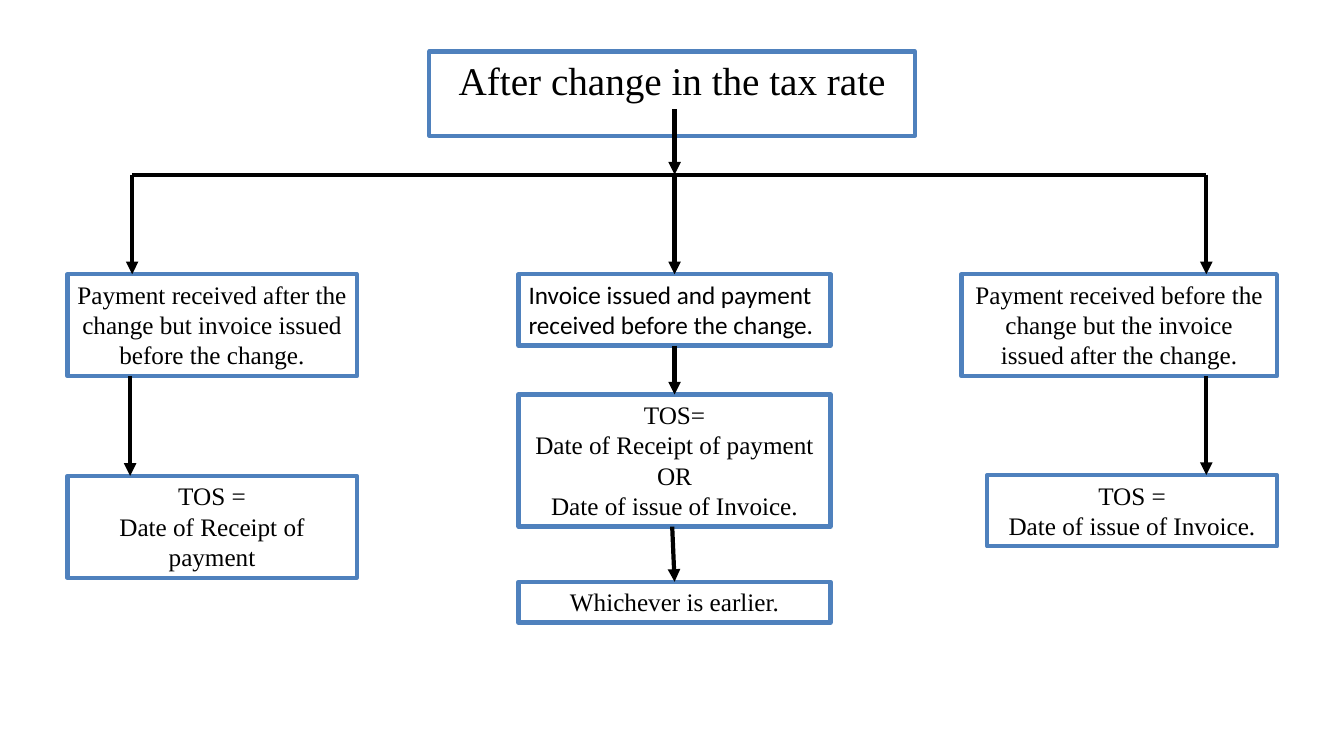
from dataclasses import dataclass

from lxml import etree
from pptx import Presentation
from pptx import util as u
from pptx.dml import color
from pptx.enum import shapes, text
from pptx.oxml import ns

COLOURS = {"paper": "FFFFFF", "border": "4F81BD", "ink": "000000"}
SERIF = "Times New Roman"
BUS_TOP = 4.4
BRANCH_TOP = 6.91
TRUNK = 17.0


@dataclass
class Card:
    """One box of a branch, with the x where its arrow arrives."""
    box: tuple
    lines: list
    arrive: float
    depart: float = None
    font: str = SERIF
    align: int = text.PP_ALIGN.CENTER


def rgb(name):
    """Look up a named colour."""
    return color.RGBColor.from_string(COLOURS[name])


def style_box(shape, lines, size, font=SERIF, align=text.PP_ALIGN.CENTER):
    """Fill, outline and write a bordered box."""
    shape.fill.solid()
    shape.fill.fore_color.rgb = rgb("paper")
    shape.line.color.rgb = rgb("border")
    shape.line.width = u.Pt(3)
    frame = shape.text_frame
    frame.text = "\n".join(lines)
    frame.word_wrap = True
    frame.auto_size = text.MSO_AUTO_SIZE.SHAPE_TO_FIT_TEXT
    frame.vertical_anchor = text.MSO_ANCHOR.TOP
    for para in frame.paragraphs:
        para.alignment = align
        para.font.name = font
        para.font.size = u.Pt(size)
        para.font.color.rgb = rgb("ink")


def add_line(page, start, end, arrow=True):
    """Draw a straight black line, with an arrowhead if wanted."""
    line = page.shapes.add_connector(
        shapes.MSO_CONNECTOR.STRAIGHT, *map(u.Cm, start + end))
    line.line.color.rgb = rgb("ink")
    line.line.width = u.Pt(3)
    if arrow:
        outline = line.line._get_or_add_ln()
        etree.SubElement(outline, ns.qn("a:tailEnd"), type="triangle")
    etree.SubElement(line._element.spPr, ns.qn("a:effectLst"))
    return line


def is_middle(x, box):
    """Tell whether x is the middle of a box."""
    return abs(box[0] + box[2] / 2 - x) < 0.02


def add_heading(page, box):
    """Place the title and the arrow down to the crossbar."""
    left, top, width, height = box
    title = page.shapes.title
    title.left, title.top, title.width, title.height = map(u.Cm, box)
    style_box(title, ["After change in the tax rate"], 28)
    add_line(page, (TRUNK, top + height), (TRUNK, BUS_TOP))


def add_branch(page, cards):
    """Stack cards below the crossbar and join them with arrows."""
    above = above_shape = None
    for card in cards:
        shape = page.shapes.add_shape(
            shapes.MSO_SHAPE.RECTANGLE, *map(u.Cm, card.box))
        shape.shadow.inherit = False
        style_box(shape, card.lines, 18, card.font, card.align)
        depart = card.depart or card.arrive
        start_y = above.box[1] + above.box[3] if above else BUS_TOP
        arrow = add_line(page, (depart, start_y), (card.arrive, card.box[1]))
        if above and is_middle(depart, above.box):
            arrow.begin_connect(above_shape, 2)
        if is_middle(card.arrive, card.box):
            arrow.end_connect(shape, 0)
        above, above_shape = card, shape


def main():
    """Build the slide and save it."""
    deck = Presentation()
    deck.slide_width, deck.slide_height = u.Cm(33.87), u.Cm(19.05)
    page = deck.slides.add_slide(deck.slide_layouts[5])
    add_heading(page, (10.82, 1.3, 12.24, 1.46))

    payment_after = [
        Card((1.7, BRANCH_TOP, 7.29, 2.57),
             ["Payment received after the change but invoice issued before the change."], 3.33),
        Card((1.7, 11.99, 7.29, 2.57), ["TOS =", "Date of Receipt of payment"], 3.28),
    ]
    both_before = [
        Card((13.07, BRANCH_TOP, 7.86, 1.8),
             ["Invoice issued and payment received before the change."],
             TRUNK, font="Calibri", align=text.PP_ALIGN.LEFT),
        Card((13.07, 9.94, 7.86, 3.33),
             ["TOS=", "Date of Receipt of payment", "OR", "Date of issue of Invoice."], TRUNK),
        Card((13.07, 14.66, 7.86, 1.03), ["Whichever is earlier."], TRUNK, depart=16.94),
    ]
    payment_before = [
        Card((24.23, BRANCH_TOP, 7.95, 2.57),
             ["Payment received before the change but the invoice issued after the change."], 30.4),
        Card((24.88, 11.97, 7.3, 1.8), ["TOS =", "Date of issue of Invoice."], 30.4),
    ]

    add_line(page, (payment_after[0].arrive, BUS_TOP),
             (payment_before[0].arrive, BUS_TOP), arrow=False)
    for cards in (payment_after, both_before, payment_before):
        add_branch(page, cards)
    deck.save("out.pptx")


if __name__ == "__main__":
    main()
